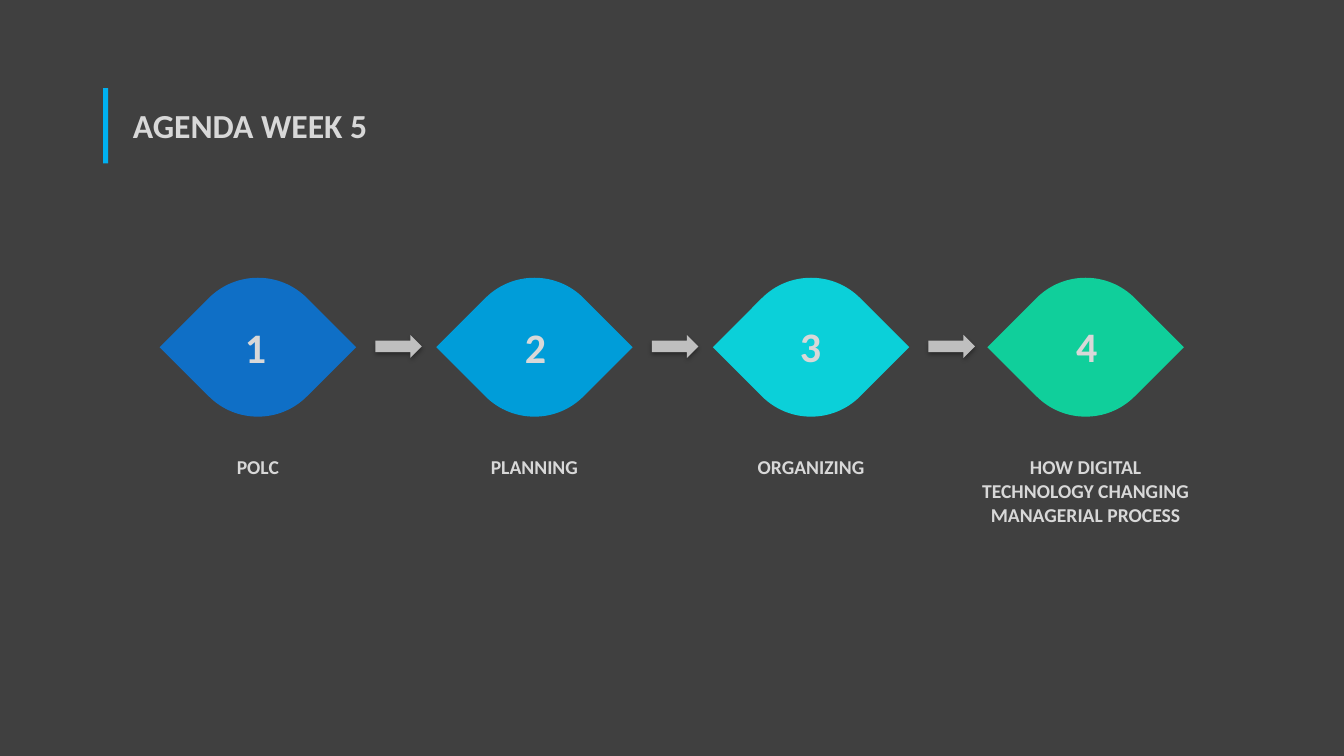
import math

from lxml import etree
from pptx import Presentation
from pptx.dml.color import RGBColor
from pptx.enum import shapes, text
from pptx.oxml.ns import qn
from pptx.util import Cm, Pt

TEXT = "D8D8D8"
# label, label height, leaf colour, leaf centre, number left, number top
STEPS = [
    ("POLC", 0.86, "0F6FC6", 6.5, 5.92, 7.98),
    ("PLANNING", 0.86, "009DD9", 13.47, 12.98, 7.98),
    ("ORGANIZING", 0.86, "0BD0D9", 20.44, 19.91, 7.95),
    ("HOW DIGITAL TECHNOLOGY CHANGING MANAGERIAL PROCESS", 2.06,
     "10CF9B", 27.36, 26.87, 7.95),
]
LEAF_Y, RADIUS = 8.75, 1.75


def paint(fill, color):
    fill.solid()
    fill.fore_color.rgb = RGBColor.from_string(color)


def finish(sp, color):
    sp.shadow.inherit = False
    paint(sp.fill, color)
    sp.line.fill.background()


def add_block(s, kind, x, y, w, h, color):
    sp = s.shapes.add_shape(kind, Cm(x), Cm(y), Cm(w), Cm(h))
    finish(sp, color)
    return sp


def add_text(s, words, x, y, w, h, size, align=text.PP_ALIGN.LEFT):
    tf = s.shapes.add_textbox(Cm(x), Cm(y), Cm(w), Cm(h)).text_frame
    tf.word_wrap = True
    tf.auto_size = text.MSO_AUTO_SIZE.SHAPE_TO_FIT_TEXT
    tf.text = words
    p = tf.paragraphs[0]
    p.alignment = align
    font = p.runs[0].font
    font.name, font.size, font.bold = "Calibri", Pt(size), True
    font.color.rgb = RGBColor.from_string(TEXT)


def bend(apex, end, side):
    """Turn the lines over an apex into one cubic quarter circle."""
    x, y = (int(apex[0].get(axis)) for axis in "xy")
    dx, dy = Cm(0.317 * RADIUS), Cm(0.098 * RADIUS)
    apex.tag_name = None
    curve = etree.Element(qn("a:cubicBezTo"))
    for cx in (x + side * dx, x - side * dx):
        etree.SubElement(curve, qn("a:pt"), x=str(cx), y=str(y + side * dy))
    curve.append(end[0])
    end.getparent().remove(end)
    apex.getparent().replace(apex, curve)


def add_leaf(s, cx, color):
    """Draw a circle's top and bottom quarters joined by tangents to two side tips."""
    tip, corner = RADIUS * math.sqrt(2), RADIUS / math.sqrt(2)
    half = [(-tip, 0), (-corner, -corner), (0, -RADIUS), (corner, -corner)]
    points = half + [(-x, -y) for x, y in half]
    outline = [(Cm(cx + x), Cm(LEAF_Y + y)) for x, y in points]
    builder = s.shapes.build_freeform(*outline[0])
    builder.add_line_segments(outline[1:], close=True)
    sp = builder.convert_to_shape()
    lines = list(sp._element.iter(qn("a:lnTo")))
    bend(lines[1], lines[2], -1)
    bend(lines[5], lines[6], 1)
    finish(sp, color)


def add_arrow(s, x, y):
    sp = add_block(s, shapes.MSO_SHAPE.RIGHT_ARROW, x, y, 1.17, 0.58, "BFBFBF")
    effects = sp._element.spPr.find(qn("a:effectLst"))
    shadow = etree.SubElement(
        effects, qn("a:outerShdw"), blurRad=str(Pt(3.1)), dist=str(Pt(1.8)),
        dir="5400000", rotWithShape="0")
    color = etree.SubElement(shadow, qn("a:srgbClr"), val="000000")
    etree.SubElement(color, qn("a:alpha"), val="33000")


def main():
    prs = Presentation()
    prs.slide_width, prs.slide_height = Cm(33.87), Cm(19.05)
    s = prs.slides.add_slide(prs.slide_layouts[6])
    paint(s.background.fill, "404040")

    add_block(s, shapes.MSO_SHAPE.RECTANGLE, 2.6, 2.22, 0.13, 1.9, "00B0F0")
    add_text(s, "AGENDA WEEK 5", 3.1, 2.51, 10.36, 1.28, 24)

    for i, (label, height, color, cx, num_x, num_y) in enumerate(STEPS, 1):
        add_leaf(s, cx, color)
        add_text(s, str(i), num_x, num_y, 1.17, 1.54, 30)
        add_text(s, label, cx - 2.9, 11.35, 5.8, height, 14, text.PP_ALIGN.CENTER)
        if i < len(STEPS):
            add_arrow(s, cx + 2.96, 8.44)

    prs.save("out.pptx")


if __name__ == "__main__":
    main()
